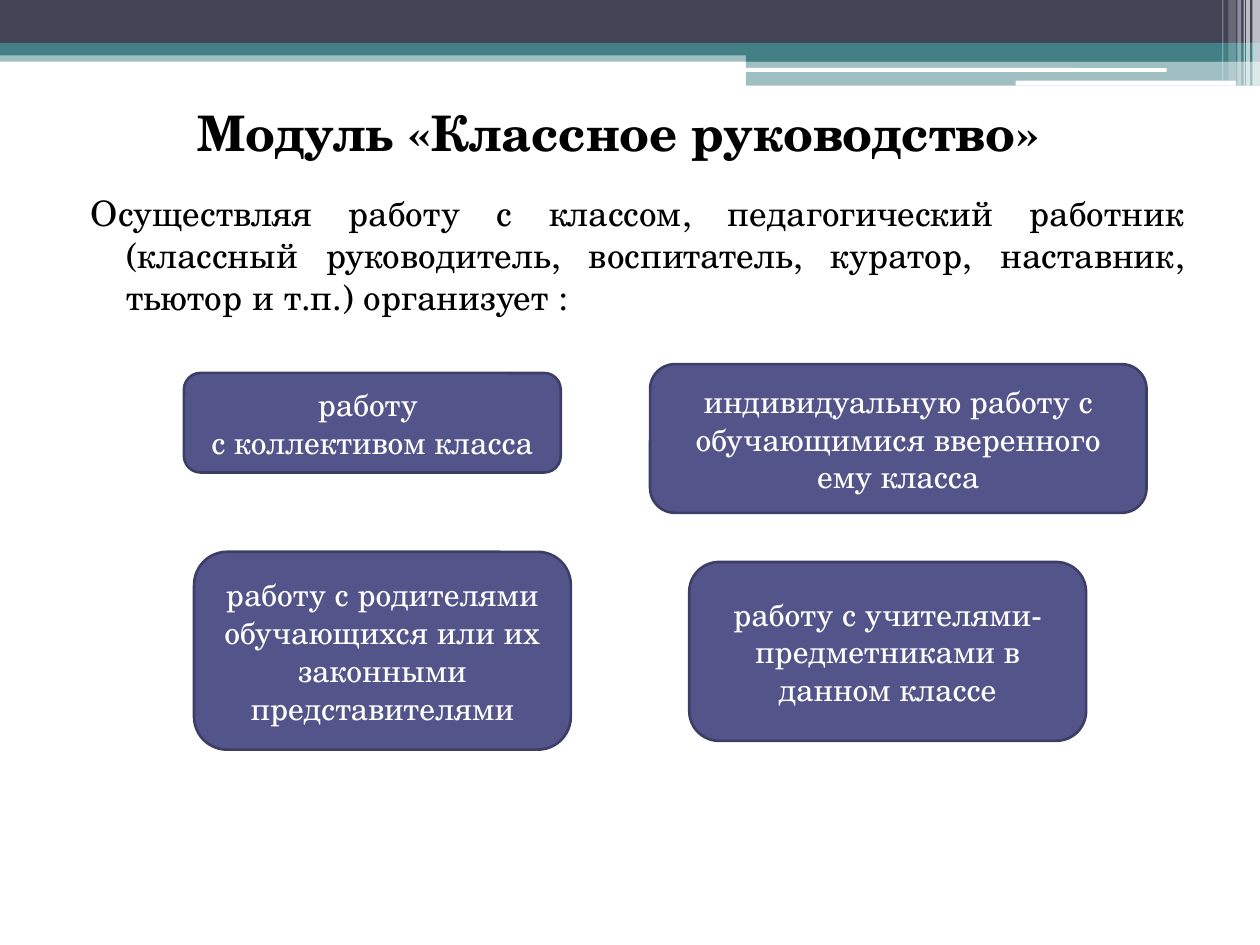
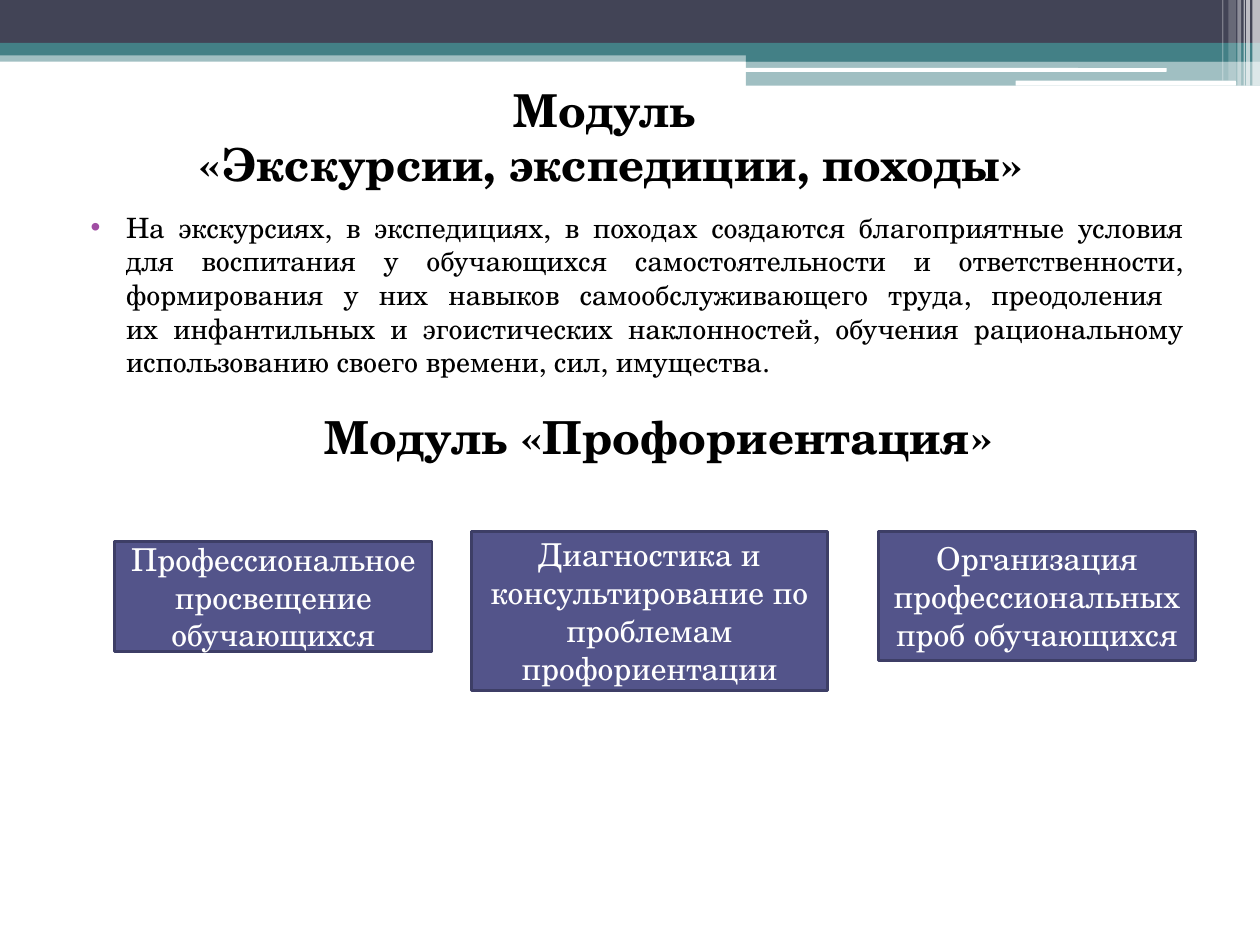
"""Build two slides about the modules of a school education programme."""
from dataclasses import dataclass

from lxml import etree
from pptx import Presentation
from pptx import util as u
from pptx.dml.color import RGBColor
from pptx.enum import shapes, text
from pptx.oxml.ns import qn


@dataclass(frozen=True)
class Theme:
    font: str = "TeX Gyre Schola"
    ink: str = "000000"
    white: str = "FFFFFF"
    slate: str = "424456"
    teal: str = "438086"
    box: str = "53548A"
    box_line: str = "3D3E66"
    bullet: str = "A04DA3"
    title_size: float = 28
    long_title_size: float = 25.9
    heading_size: float = 26
    lead_size: float = 20
    body_size: float = 16
    box_size: float = 18


theme = Theme()
RECT = shapes.MSO_SHAPE.RECTANGLE
ROUND = shapes.MSO_SHAPE.ROUNDED_RECTANGLE
CENTER = text.PP_ALIGN.CENTER


def write(shape, paragraphs, size, color, align, bold=False, hanging=False, bullet=None):
    """Fill a shape with paragraphs; a newline inside one is a line break."""
    frame = shape.text_frame
    for index, content in enumerate(paragraphs):
        paragraph = frame.add_paragraph() if index else frame.paragraphs[0]
        paragraph.alignment = align
        paragraph.space_before = u.Pt(3 if hanging else 0)
        properties = paragraph._p.get_or_add_pPr()
        properties.set("marL", str(u.Inches(0.4 if hanging else 0)))
        properties.set("indent", str(u.Inches(-0.28 if hanging else 0)))
        if bullet:
            bullet_color = etree.SubElement(properties, qn("a:buClr"))
            etree.SubElement(bullet_color, qn("a:srgbClr"), val=theme.bullet)
            etree.SubElement(properties, qn("a:buFont"), typeface="Arial")
            etree.SubElement(properties, qn("a:buChar"), char=bullet)
        else:
            etree.SubElement(properties, qn("a:buNone"))
        for number, line in enumerate(content.split("\n")):
            if number:
                paragraph.add_line_break()
            run = paragraph.add_run()
            run.text = line
            run.font.name = theme.font
            run.font.size = u.Pt(size)
            run.font.bold = bold
            run.font.color.rgb = RGBColor.from_string(color)


def add_block(slide, kind, place, fill):
    """Add a filled preset shape without a shadow."""
    shape = slide.shapes.add_shape(kind, *map(u.Inches, place))
    shape.shadow.inherit = False
    shape.fill.solid()
    shape.fill.fore_color.rgb = RGBColor.from_string(fill)
    return shape


presentation = Presentation()
presentation.slide_width = u.Inches(10)
presentation.slide_height = u.Inches(7.5)
layout = presentation.slide_layouts[1]

bands = [
    (RECT, (0, 0.4, 10, 0.09), theme.teal, 50),
    (RECT, (0, 0, 10, 0.34), theme.slate, 100),
    (RECT, (0, 0.34, 10, 0.1), theme.teal, 100),
    (RECT, (5.92, 0.39, 4.08, 0.1), theme.teal, 100),
    (RECT, (5.92, 0.48, 4.08, 0.2), theme.teal, 50),
    (ROUND, (5.91, 0.54, 3.35, 0.03), theme.white, 100),
    (ROUND, (8.06, 0.64, 1.75, 0.04), theme.white, 100),
]
stripes = [
    (9.94, 0.06, 0.68, 65),
    (9.89, 0.03, 0.68, 65),
    (9.87, 0.01, 0.68, 60),
    (9.82, 0.03, 0.68, 40),
    (9.75, 0.06, 0.64, 20),
    (9.7, 0.01, 0.64, 30),
]
bands += [(RECT, (left, 0, width, height), theme.white, opacity)
          for left, width, height, opacity in stripes]

pages = [
    {
        "title": ["Модуль «Классное руководство»"],
        "title_place": (0.35, 0.76, 9, 1.1),
        "title_size": theme.title_size,
        "title_hanging": True,
        "body": "Осуществляя работу с классом, педагогический работник (классный "
                "руководитель, воспитатель, куратор, наставник, тьютор и т.п.) организует :",
        "body_place": (0.5, 1.47, 9, 5.72),
        "body_size": theme.lead_size,
        "bullet": None,
        "box_kind": ROUND,
        "boxes": [
            ("работу \nс коллективом класса", (1.46, 2.96, 2.99, 0.79)),
            ("индивидуальную работу с обучающимися вверенного ему класса",
             (5.16, 2.89, 3.94, 1.18)),
            ("работу с учителями-предметниками в данном классе", (5.47, 4.46, 3.15, 1.42)),
            ("работу с родителями обучающихся или их законными представителями",
             (1.54, 4.38, 2.99, 1.57)),
        ],
    },
    {
        "title": ["Модуль ", "«Экскурсии, экспедиции, походы»"],
        "title_place": (0.35, 0.6, 9, 0.87),
        "title_size": theme.long_title_size,
        "title_hanging": False,
        "body": "На экскурсиях, в экспедициях, в походах создаются благоприятные условия "
                "для воспитания у обучающихся самостоятельности и ответственности, "
                "формирования у них навыков самообслуживающего труда, преодоления \n"
                "их инфантильных и эгоистических наклонностей, обучения рациональному "
                "использованию своего времени, сил, имущества.",
        "body_place": (0.5, 1.62, 9, 1.5),
        "body_size": theme.body_size,
        "bullet": "•",
        "box_kind": RECT,
        "boxes": [
            ("Профессиональное просвещение обучающихся", (0.91, 4.3, 2.52, 0.87)),
            ("Диагностика и консультирование по проблемам профориентации",
             (3.74, 4.22, 2.83, 1.26)),
            ("Организация профессиональных проб обучающихся", (6.97, 4.22, 2.52, 1.02)),
        ],
    },
]

for page in pages:
    slide = presentation.slides.add_slide(layout)
    title, body = slide.shapes.title, slide.placeholders[1]
    for placeholder, place in ((title, page["title_place"]), (body, page["body_place"])):
        placeholder.left, placeholder.top, placeholder.width, placeholder.height = map(
            u.Inches, place)
        placeholder.text_frame.auto_size = text.MSO_AUTO_SIZE.NONE
        placeholder.text_frame.vertical_anchor = text.MSO_ANCHOR.TOP
    write(title, page["title"], page["title_size"], theme.ink, CENTER,
          bold=True, hanging=page["title_hanging"])
    write(body, [page["body"]], page["body_size"], theme.ink, text.PP_ALIGN.JUSTIFY,
          hanging=True, bullet=page["bullet"])

    for label, place in page["boxes"]:
        box = add_block(slide, page["box_kind"], place, theme.box)
        box.line.color.rgb = RGBColor.from_string(theme.box_line)
        box.line.width = u.Pt(1.5)
        box.text_frame.word_wrap = True
        box.text_frame.vertical_anchor = text.MSO_ANCHOR.MIDDLE
        write(box, [label], theme.box_size, theme.white, CENTER)

heading = slide.shapes.add_textbox(*map(u.Inches, (2.48, 3.2, 5.72, 0.54)))
heading.text_frame.word_wrap = False
heading.text_frame.auto_size = text.MSO_AUTO_SIZE.SHAPE_TO_FIT_TEXT
write(heading, ["Модуль «Профориентация»"], theme.heading_size, theme.ink,
      text.PP_ALIGN.LEFT, bold=True)

for kind, place, color, opacity in bands:
    band = add_block(slide, kind, place, color)
    band.line.fill.background()
    if opacity < 100:
        fill_color = band.element.spPr.find(".//" + qn("a:srgbClr"))
        etree.SubElement(fill_color, qn("a:alpha"), val=str(opacity * 1000))
    layout.shapes.element.append(band.element)

presentation.save("out.pptx")
